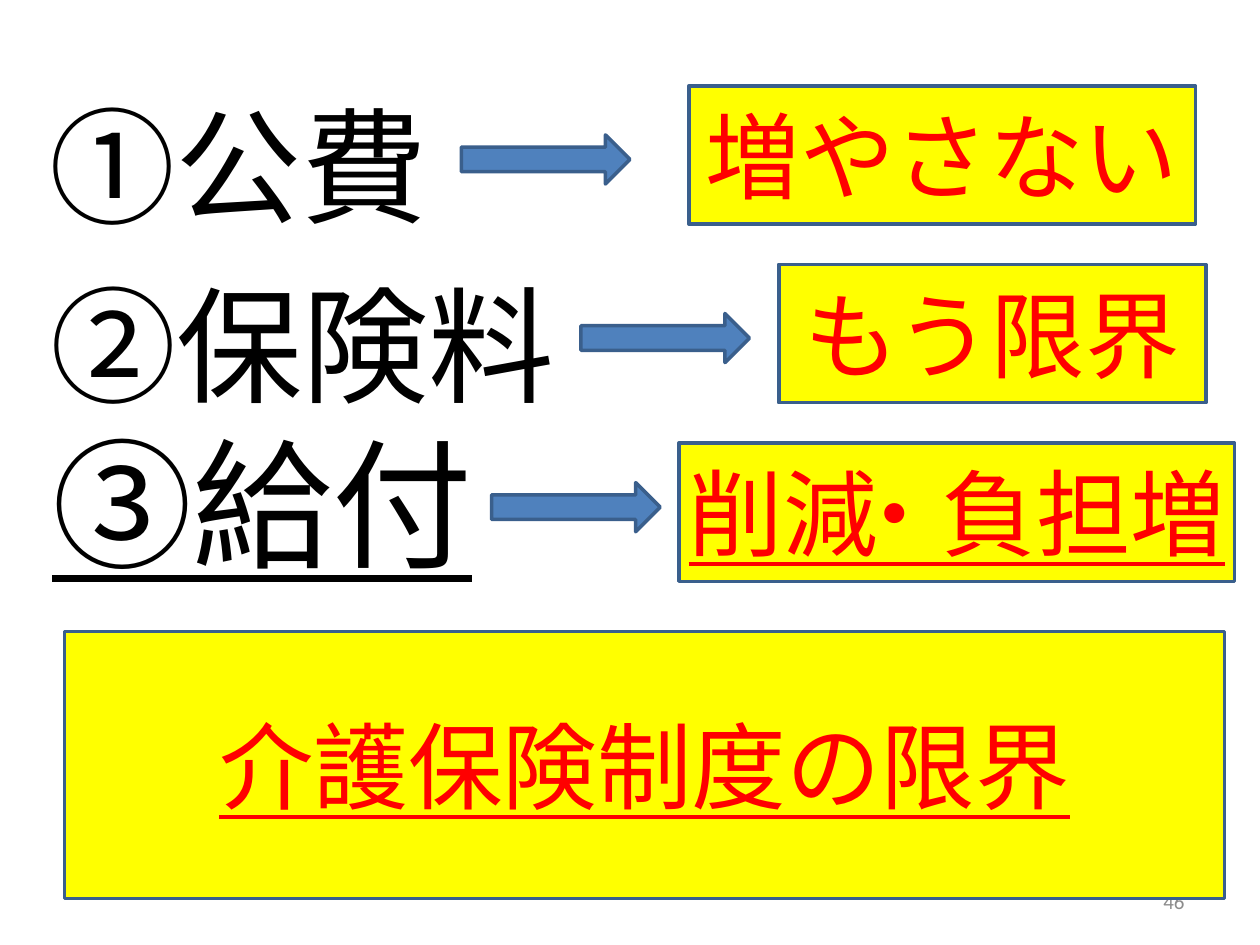
"""Build a slide on the limits of the long-term care insurance system."""
from pptx import Presentation
from pptx.dml.color import RGBColor
from pptx.enum.shapes import MSO_SHAPE
from pptx.enum.text import MSO_ANCHOR, PP_ALIGN
from pptx.util import Cm, Pt

RECTANGLE, RIGHT_ARROW = MSO_SHAPE.RECTANGLE, MSO_SHAPE.RIGHT_ARROW
MIDDLE, CENTER, RIGHT = MSO_ANCHOR.MIDDLE, PP_ALIGN.CENTER, PP_ALIGN.RIGHT

THEME = {
    "font": "Calibri",
    "black": "000000", "red": "FF0000", "yellow": "FFFF00",
    "blue": "4F81BD", "outline": "3A5F8C", "gray": "8C8C8C",
    "number_size": 12, "box_size": 54, "label_size": 72, "large_size": 80,
    "outline_width": 2, "tight_spacing": -17.5,
}

ROWS = [
    {"label": "①公費", "label_at": (0.51, 1.12, 8.61), "arrow_at": (9.3, 2.72),
     "answer": ["増やさない"], "answer_at": (13.89, 10.21), "key": False},
    {"label": "②保険料", "label_at": (0.69, 4.72, 10.8), "arrow_at": (11.71, 6.32),
     "answer": ["もう限界"], "answer_at": (15.7, 8.61), "key": False},
    {"label": "③給付", "label_at": (0.69, 7.92, 9.19), "arrow_at": (9.91, 9.73),
     "answer": ["削", "減・", "負担増"], "answer_at": (13.69, 11.2), "key": True},
]
CONCLUSION, CONCLUSION_AT = "介護保険制度の限界", (1.3, 12.73, 23.39, 5.38)
PAGE_NUMBER, PAGE_NUMBER_AT = "46", (18.21, 17.65, 5.92, 1.02)

ANSWER_TOP, ROW_PITCH, ANSWER_HEIGHT = 1.73, 3.6, 2.79
LABEL_HEIGHT = 4.38
ARROW_SIZE = (3.4, 0.99)


def color(name):
    return RGBColor.from_string(THEME[name])


def write(shape, *parts, size="box_size", ink="red", align=CENTER, underline=False):
    frame = shape.text_frame
    frame.word_wrap = False
    frame.vertical_anchor = MIDDLE
    paragraph = frame.paragraphs[0]
    paragraph.alignment = align
    for part in parts:
        run = paragraph.add_run()
        run.text = part
        run.font.name = THEME["font"]
        run.font.size = Pt(THEME[size])
        run.font.color.rgb = color(ink)
        run.font.underline = underline
        if part.endswith("・"):
            run._r.get_or_add_rPr().set("spc", str(int(THEME["tight_spacing"] * 100)))


def add_text(slide, position, text, **text_format):
    write(slide.shapes.add_textbox(*map(Cm, position)), text, **text_format)


def add_block(slide, kind, position, fill):
    shape = slide.shapes.add_shape(kind, *map(Cm, position))
    shape.shadow.inherit = False
    shape.fill.solid()
    shape.fill.fore_color.rgb = color(fill)
    shape.line.color.rgb = color("outline")
    shape.line.width = Pt(THEME["outline_width"])
    return shape


def add_row(slide, index, row):
    left, top, width = row["label_at"]
    add_text(slide, (left, top, width, LABEL_HEIGHT), row["label"], ink="black",
             size="large_size" if row["key"] else "label_size", underline=row["key"])
    add_block(slide, RIGHT_ARROW, row["arrow_at"] + ARROW_SIZE, "blue")
    left, width = row["answer_at"]
    position = (left, ANSWER_TOP + index * ROW_PITCH, width, ANSWER_HEIGHT)
    answer = add_block(slide, RECTANGLE, position, "yellow")
    write(answer, *row["answer"], underline=row["key"])


def main():
    presentation = Presentation()
    presentation.slide_width, presentation.slide_height = Cm(25.4), Cm(19.05)
    slide = presentation.slides.add_slide(presentation.slide_layouts[6])
    add_text(slide, PAGE_NUMBER_AT, PAGE_NUMBER, size="number_size", ink="gray", align=RIGHT)
    conclusion = add_block(slide, RECTANGLE, CONCLUSION_AT, "yellow")
    write(conclusion, CONCLUSION, underline=True)
    for index, row in enumerate(ROWS):
        add_row(slide, index, row)
    presentation.save("out.pptx")


if __name__ == "__main__":
    main()
